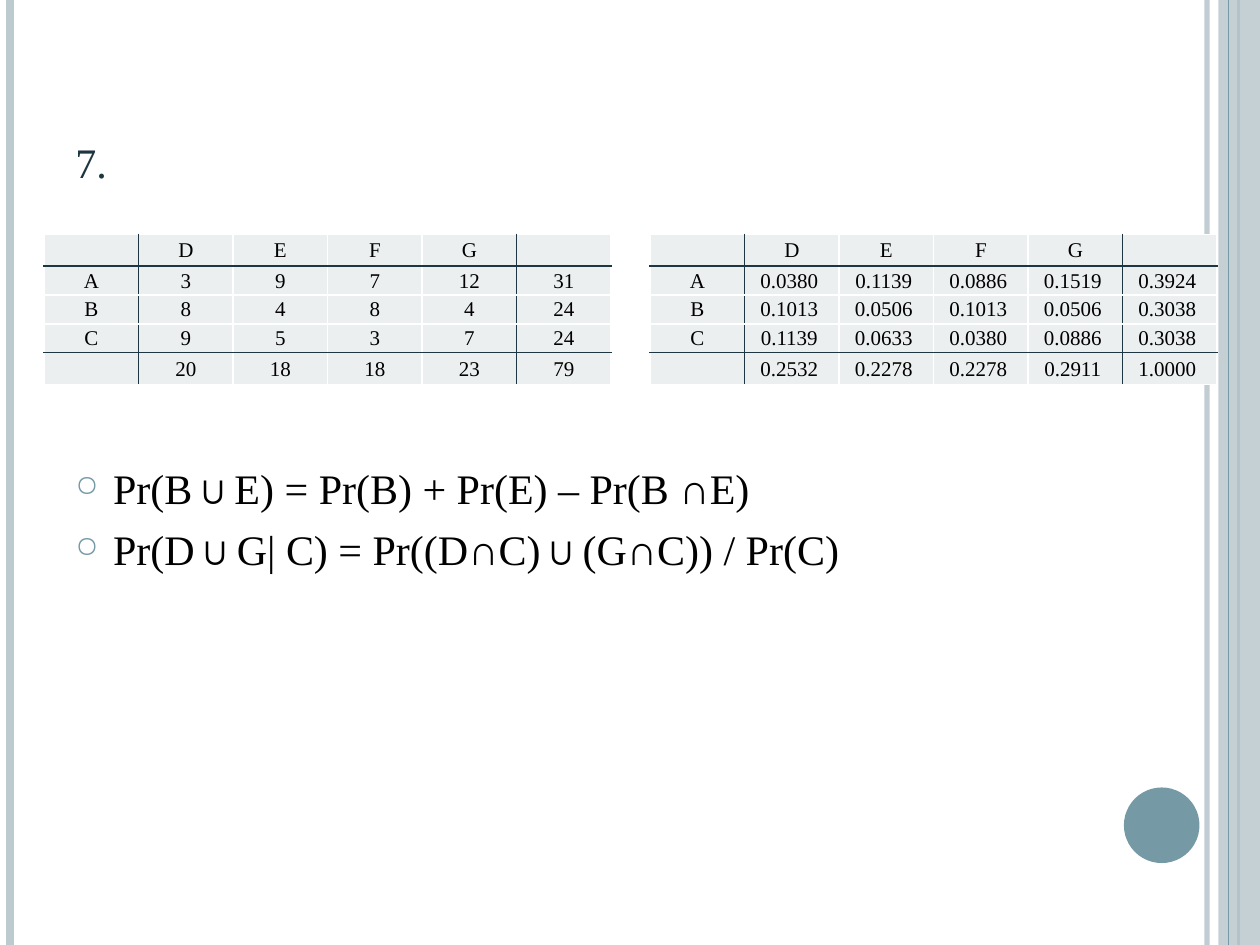
from lxml import etree
from pptx import Presentation
from pptx import util as u
from pptx.dml.color import RGBColor
from pptx.enum import shapes, text
from pptx.oxml.ns import qn

# Content
TITLE = "7."
FORMULAS = ["Pr(B∪E) = Pr(B) + Pr(E) – Pr(B ∩E)",
            "Pr(D∪G| C) = Pr((D∩C)∪(G∩C)) / Pr(C)"]
COLUMNS = ["D", "E", "F", "G"]
COUNTS = {"A": [3, 9, 7, 12], "B": [8, 4, 8, 4], "C": [9, 5, 3, 7]}

# Style
FONT = "Times New Roman"
W, H = 10, 7.5
WHITE, BLACK = RGBColor(255, 255, 255), RGBColor(0, 0, 0)
INK = RGBColor(0x1D, 0x36, 0x41)
TEAL = RGBColor(0x75, 0x9A, 0xA5)
PALE = RGBColor(0xBD, 0xCA, 0xCF)
CELL = RGBColor(0xEC, 0xEF, 0xF0)

# Layout
TABLE_TOP, TABLE_LEFTS = 1.86, (0.35, 5.16)
COL_W, ROW_HEIGHTS = 0.75, (0.25, 0.23, 0.23, 0.23, 0.25)
RULED_COLS, RULED_ROWS = (1, 5), (1, 4)  # grid lines drawn dark
# x, colour, width in points, opacity in percent
STRIPES_BEHIND = [(9.58, PALE, 3, 93), (0.08, PALE, 4.5, 100), (9.83, TEAL, 1.5, 100)]
STRIPES_FRONT = [(9.75, TEAL, 0.75, 100)]

prs = Presentation()
prs.slide_width, prs.slide_height = u.Inches(W), u.Inches(H)
s = prs.slides.add_slide(prs.slide_layouts[6])


def sub(parent, tag, **attrs):
    return etree.SubElement(parent, qn(tag), attrs)


def set_opacity(part, percent):
    color = next(part._element.spPr.iter(qn("a:srgbClr")))
    sub(color, "a:alpha", val=str(percent * 1000))


def add_stripe(x, color, width, opacity):
    x = u.Inches(x)
    line = s.shapes.add_connector(shapes.MSO_CONNECTOR.STRAIGHT, x, 0, x, u.Inches(H))
    line.line.color.rgb, line.line.width = color, u.Pt(width)
    if opacity < 100:
        set_opacity(line, opacity)
    sub(line._element.spPr, "a:effectLst")


def add_solid(kind, color, *box):
    sp = s.shapes.add_shape(kind, *map(u.Inches, box))
    sp.shadow.inherit = False
    sp.fill.solid()
    sp.fill.fore_color.rgb = color
    sp.line.fill.background()
    return sp


def add_text(lines, size, color, anchor, *box):
    tf = s.shapes.add_textbox(*map(u.Inches, box)).text_frame
    tf.word_wrap, tf.vertical_anchor = True, anchor
    tf.text = "\n".join(lines)
    for p in tf.paragraphs:
        p.font.name, p.font.size, p.font.color.rgb = FONT, u.Pt(size), color
    return tf


def add_bullet(p):
    p.space_before = u.Pt(6)
    pr = p._p.get_or_add_pPr()
    pr.set("marL", str(u.Inches(0.3)))
    pr.set("indent", str(-u.Inches(0.3)))
    # bullet marks precede the paragraph's default run properties
    default = pr.find(qn("a:defRPr"))
    clr = sub(pr, "a:buClr")
    sub(clr, "a:srgbClr", val=str(TEAL))
    for mark in (clr, sub(pr, "a:buSzPct", val="70000"), sub(pr, "a:buChar", char="○")):
        default.addprevious(mark)


def style_cell(cell, label, row, col):
    cell.margin_left = cell.margin_right = cell.margin_top = u.Inches(0.01)
    cell.margin_bottom = 0
    cell.vertical_anchor = text.MSO_ANCHOR.MIDDLE
    cell.text = label
    p = cell.text_frame.paragraphs[0]
    p.alignment = text.PP_ALIGN.CENTER
    p.font.name, p.font.size, p.font.color.rgb = FONT, u.Pt(12), BLACK
    edges = {"a:lnL": col in RULED_COLS, "a:lnR": col + 1 in RULED_COLS,
             "a:lnT": row in RULED_ROWS, "a:lnB": row + 1 in RULED_ROWS}
    for tag, ruled in edges.items():
        ln = sub(cell._tc.get_or_add_tcPr(), tag, w=str(u.Pt(1)))
        sub(sub(ln, "a:solidFill"), "a:srgbClr", val=str(INK if ruled else WHITE))
    cell.fill.solid()
    cell.fill.fore_color.rgb = CELL


def add_grid(left, rows):
    n_rows, n_cols = len(rows), len(rows[0])
    table = s.shapes.add_table(n_rows, n_cols, u.Inches(left), u.Inches(TABLE_TOP),
                               u.Inches(COL_W * n_cols), u.Inches(sum(ROW_HEIGHTS))).table
    table.first_row = table.horz_banding = False
    for col in table.columns:
        col.width = u.Inches(COL_W)
    for i, (height, labels) in enumerate(zip(ROW_HEIGHTS, rows)):
        table.rows[i].height = u.Inches(height)
        for j, label in enumerate(labels):
            style_cell(table.cell(i, j), label, i, j)


# Side stripes, right band and corner disc
for stripe in STRIPES_BEHIND:
    add_stripe(*stripe)
band = add_solid(shapes.MSO_SHAPE.RECTANGLE, PALE, 9.67, 0, 0.33, H)
set_opacity(band, 87)
for stripe in STRIPES_FRONT:
    add_stripe(*stripe)
add_solid(shapes.MSO_SHAPE.OVAL, TEAL, 8.92, 6.25, 0.6, 0.6)

# Title and formulas
title = add_text([TITLE], 30, INK, text.MSO_ANCHOR.BOTTOM, 0.5, 0.3, 8.17, 1.25)
title.paragraphs[0].runs[0].font._element.set("cap", "small")
formulas = add_text(FORMULAS, 24, BLACK, text.MSO_ANCHOR.TOP, 0.5, 3.62, 8.17, 3.46)
for p in formulas.paragraphs:
    add_bullet(p)

# Counts with margins, then the same as shares of the total
body = [(name, [*row, sum(row)]) for name, row in COUNTS.items()]
body.append(("", [sum(col) for col in zip(*(row for _, row in body))]))
total = body[-1][1][-1]
formats = (str, lambda n: f"{n / total:.4f} ")
for left, fmt in zip(TABLE_LEFTS, formats):
    add_grid(left, [["", *COLUMNS, ""]] + [[name, *map(fmt, row)] for name, row in body])

prs.save("out.pptx")
